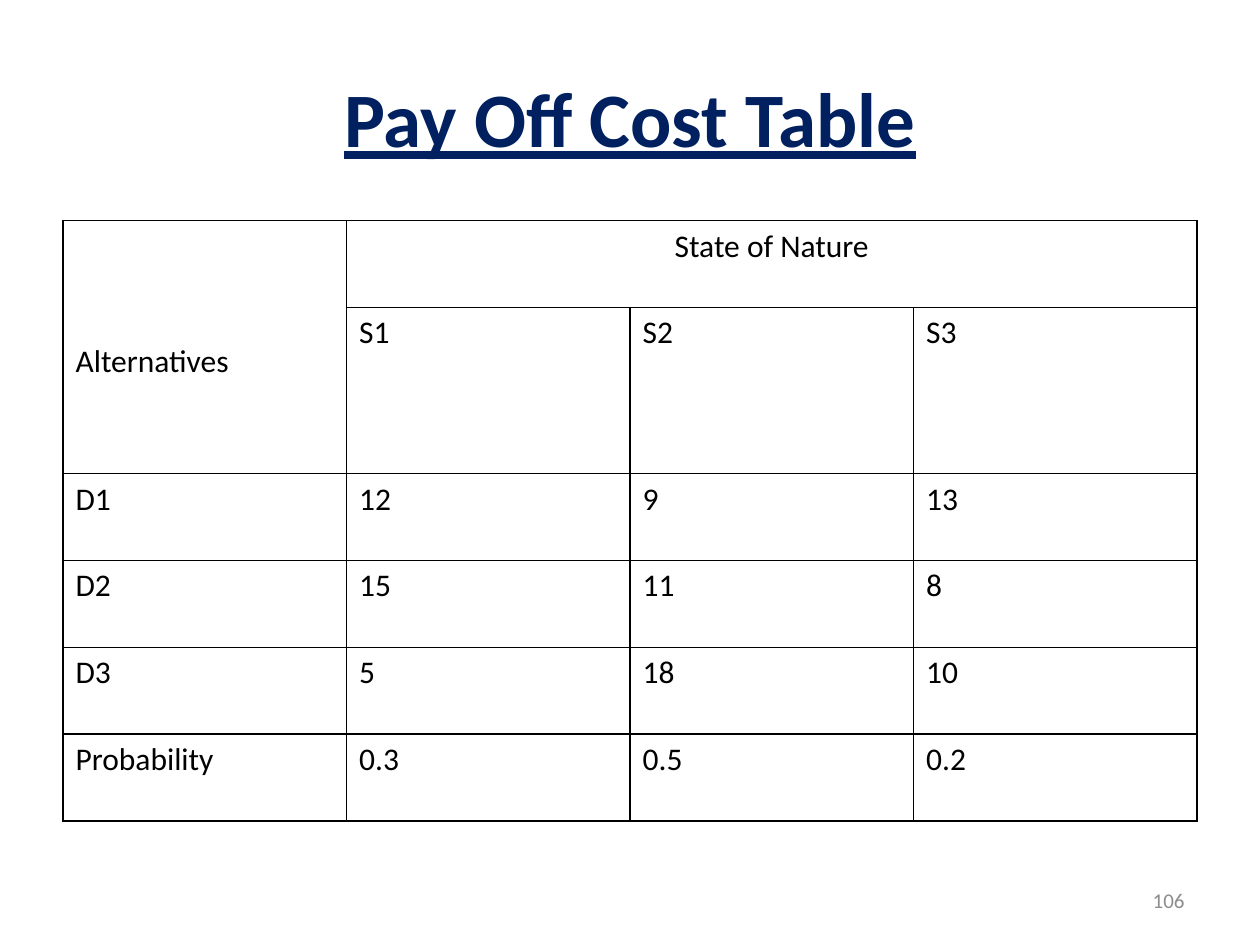
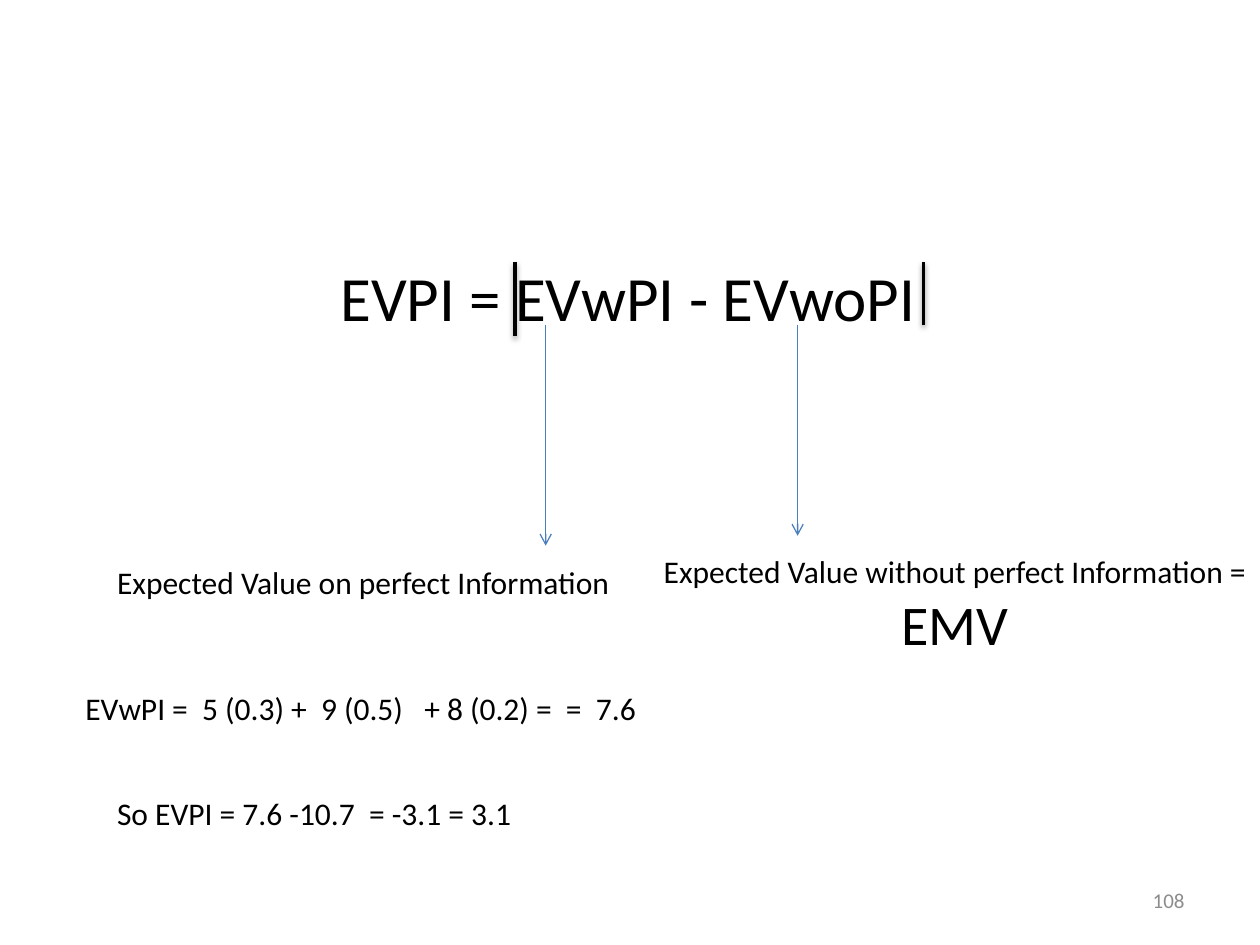
from lxml import etree
from pptx import Presentation
from pptx.dml.color import RGBColor
from pptx.enum.shapes import MSO_CONNECTOR
from pptx.enum.text import MSO_ANCHOR, MSO_AUTO_SIZE, PP_ALIGN
from pptx.oxml import parse_xml
from pptx.oxml.ns import nsdecls, qn
from pptx.util import Cm, Pt

STRAIGHT = MSO_CONNECTOR.STRAIGHT
LEFT, CENTER, RIGHT = PP_ALIGN.LEFT, PP_ALIGN.CENTER, PP_ALIGN.RIGHT
MIDDLE = MSO_ANCHOR.MIDDLE
FIT_SHAPE = MSO_AUTO_SIZE.SHAPE_TO_FIT_TEXT
TITLE_ONLY, BLANK = 5, 6

FONT = "Calibri"
NAVY, BLACK, GREY, BLUE = "002060", "000000", "8C8C8C", "4B7EBC"
MARGIN, CONTENT_WIDTH = 1.27, 22.86

PAYOFFS = [
    ["Alternatives", "State of Nature", "", ""],
    ["", "S1", "S2", "S3"],
    ["D1", "12", "9", "13"],
    ["D2", "15", "11", "8"],
    ["D3", "5", "18", "10"],
    ["Probability", "0.3", "0.5", "0.2"],
]
ROW_HEIGHT, STATE_ROW_HEIGHT = 1.75, 3.35


def color(hex_text):
    return RGBColor.from_string(hex_text)


def write(para, text, size=18, ink=BLACK, bold=False, underline=False, align=LEFT):
    para.alignment = align
    span = para.add_run()
    span.text = text
    font = span.font
    font.name, font.size = FONT, Pt(size)
    font.bold, font.underline = bold, underline
    font.color.rgb = color(ink)


def add_borders(cell, ink=BLACK, width=1):
    properties = cell._tc.get_or_add_tcPr()
    for side in ("lnL", "lnR", "lnT", "lnB"):
        properties.append(parse_xml(
            f'<a:{side} {nsdecls("a")} w="{Pt(width)}"><a:solidFill>'
            f'<a:srgbClr val="{ink}"/></a:solidFill></a:{side}>'))


class SlideBuilder:
    """Holds the deck and the page that is being filled."""

    def __init__(self):
        self.deck = Presentation()
        self.deck.slide_width, self.deck.slide_height = Cm(25.4), Cm(19.05)
        self.page = None

    def start_page(self, layout, number):
        self.page = self.deck.slides.add_slide(self.deck.slide_layouts[layout])
        box = self.page.shapes.add_textbox(Cm(18.2), Cm(17.65), Cm(5.93), Cm(1.01))
        box.text_frame.word_wrap = True
        box.text_frame.vertical_anchor = MIDDLE
        write(box.text_frame.paragraphs[0], number, size=12, ink=GREY, align=RIGHT)

    def title(self, text):
        box = self.page.shapes.title
        box.left, box.top = Cm(MARGIN), Cm(0.76)
        box.width, box.height = Cm(CONTENT_WIDTH), Cm(3.18)
        box.text_frame.vertical_anchor = MIDDLE
        write(box.text_frame.paragraphs[0], text, size=44, ink=NAVY,
              bold=True, underline=True, align=CENTER)

    def label(self, left, top, width, height, text, **style):
        """Add an unwrapped text box and return its text frame."""
        box = self.page.shapes.add_textbox(Cm(left), Cm(top), Cm(width), Cm(height))
        frame = box.text_frame
        frame.word_wrap = False
        frame.auto_size = FIT_SHAPE
        write(frame.paragraphs[0], text, **style)
        return frame

    def vertical_line(self, x, top, bottom, ink, width, arrow=False, shadow=False):
        line = self.page.shapes.add_connector(STRAIGHT, Cm(x), Cm(top), Cm(x), Cm(bottom))
        line.line.color.rgb = color(ink)
        line.line.width = Pt(width)
        if arrow:
            etree.SubElement(line.line._get_or_add_ln(), qn("a:tailEnd"), type="arrow")
        effects = etree.SubElement(line._element.spPr, qn("a:effectLst"))
        if shadow:
            effects.append(parse_xml(
                f'<a:outerShdw {nsdecls("a")} blurRad="{Pt(3.1)}" dist="{Pt(1.6)}" '
                f'dir="5400000" rotWithShape="0"><a:srgbClr val="{BLACK}">'
                '<a:alpha val="38000"/></a:srgbClr></a:outerShdw>'))

    def payoff_table(self, top, rows):
        heights = [STATE_ROW_HEIGHT if index == 1 else ROW_HEIGHT
                   for index in range(len(rows))]
        table = self.page.shapes.add_table(
            len(rows), len(rows[0]), Cm(MARGIN), Cm(top),
            Cm(CONTENT_WIDTH), Cm(sum(heights))).table
        table.first_row = table.horz_banding = False
        for row, height in zip(table.rows, heights):
            row.height = Cm(height)
        for row_index, values in enumerate(rows):
            for column_index, value in enumerate(values):
                cell = table.cell(row_index, column_index)
                add_borders(cell)
                cell.fill.background()
                if value:
                    spans_states = (row_index, column_index) == (0, 1)
                    write(cell.text_frame.paragraphs[0], value,
                          align=CENTER if spans_states else LEFT)
        corner = table.cell(0, 0)
        corner.margin_top = Cm(2.45)
        corner.merge(table.cell(1, 0))
        table.cell(0, 1).merge(table.cell(0, len(rows[0]) - 1))


def build_payoff_page(builder):
    builder.start_page(TITLE_ONLY, "106")
    builder.title("Pay Off Cost Table")
    builder.payoff_table(4.45, PAYOFFS)


def build_formula_page(builder):
    builder.start_page(BLANK, "108")
    builder.label(6.55, 5.08, 12.22, 1.8, "EVPI = EVwPI - EVwoPI", size=36, align=CENTER)
    for x, bottom in ((11, 11), (16.08, 10.8)):
        builder.vertical_line(x, 6.55, bottom, BLUE, 0.75, arrow=True)
    without_information = builder.label(
        13.13, 11, 12.4, 2.39, "Expected Value without perfect Information =")
    write(without_information.add_paragraph(), "EMV", size=32, align=CENTER)
    for left, top, width, text in (
        (2.11, 11.23, 10.57, "Expected Value on perfect Information"),
        (1.47, 13.77, 11.79, "EVwPI =  5 (0.3) +  9 (0.5)   + 8 (0.2) =  =  7.6"),
        (2.11, 15.88, 8.56, "So EVPI = 7.6 -10.7  = -3.1 = 3.1"),
    ):
        builder.label(left, top, width, 1.02, text)
    for x, bottom in ((10.38, 6.78), (18.62, 6.55)):
        builder.vertical_line(x, 5.28, bottom, BLACK, 2, shadow=True)


def main():
    builder = SlideBuilder()
    build_payoff_page(builder)
    build_formula_page(builder)
    builder.deck.save("out.pptx")


if __name__ == "__main__":
    main()
